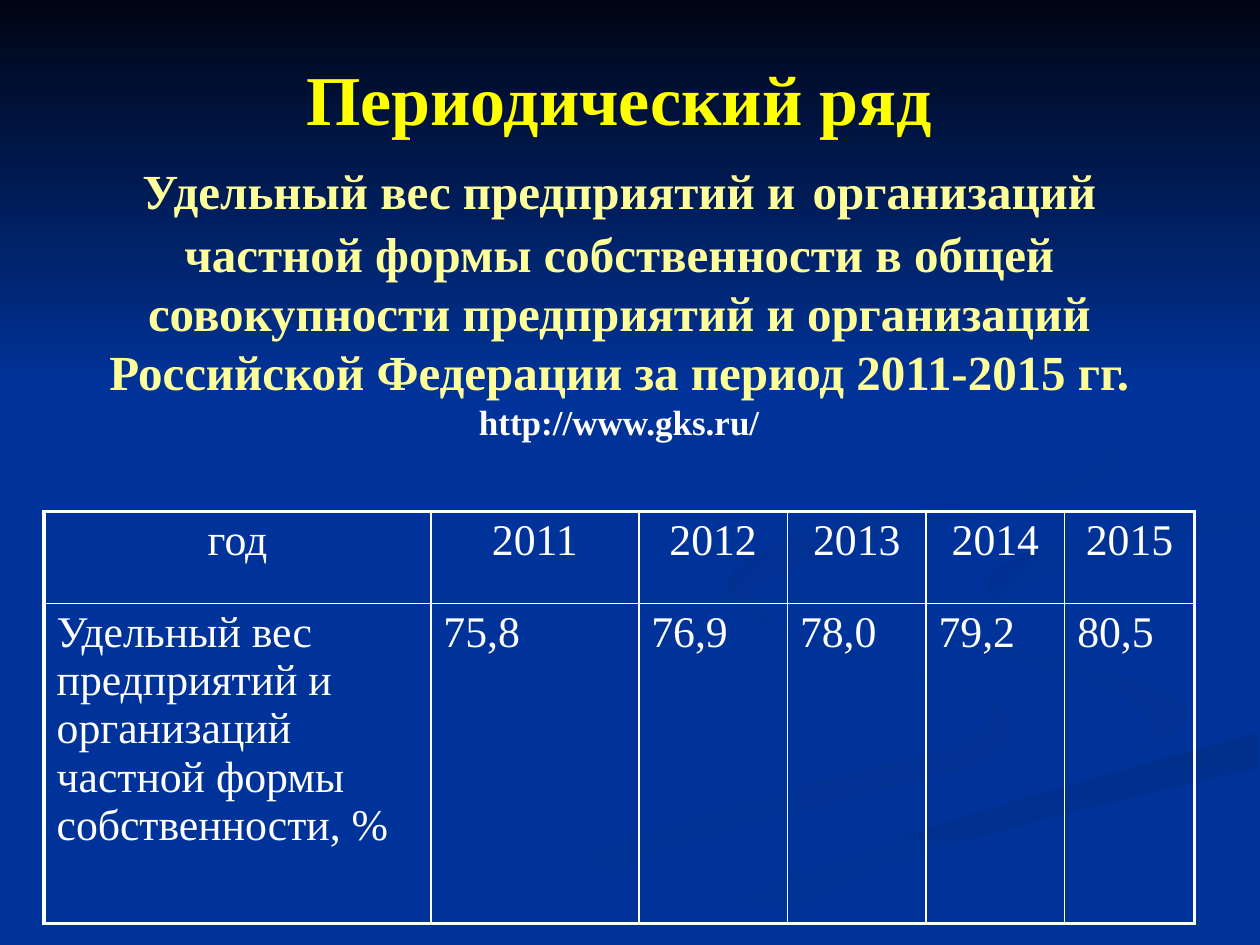
"""Build the slide on a periodic time series: title, table and ribbon background."""
from lxml import etree
from pptx import Presentation
from pptx.dml.color import RGBColor
from pptx.enum.shapes import MSO_SHAPE
from pptx.enum.text import MSO_ANCHOR, PP_ALIGN
from pptx.oxml.ns import qn
from pptx.util import Inches, Pt

RECT, MIDDLE = MSO_SHAPE.RECTANGLE, MSO_ANCHOR.MIDDLE
CENTER, LEFT = PP_ALIGN.CENTER, PP_ALIGN.LEFT
FONT, BLUE, WHITE, PALE = "Times New Roman", "003399", "FFFFFF", "FFFF99"
STEPS = 5


def rgb(value):
    return RGBColor.from_string(value)


def paint(sp, start, end, angle):
    sp.shadow.inherit = False
    sp.line.fill.background()
    sp.fill.gradient()
    sp.fill.gradient_angle = -angle
    for stop, color in zip(sp.fill.gradient_stops, (start, end)):
        stop.color.rgb = rgb(color)


prs = Presentation()
prs.slide_width, prs.slide_height = Inches(10), Inches(7.5)
U = prs.slide_width // 1000
s = prs.slides.add_slide(prs.slide_layouts[6])
s.background.fill.solid()
s.background.fill.fore_color.rgb = rgb(BLUE)

bend = [(724, 464), (733, 483), (792, 509), (905, 540), (943, 570), (894, 605)]
sweep = [(503, 749), (630, 693), (797, 638), (999, 581)]
fold = [(999, 402), (849, 427), (781, 462), (826, 496)]
ribbons = [
    (BLUE, "003193", 0, [
        [(575, 459), (581, 484), (654, 513), (770, 551), (785, 570), (749, 594),
         (579, 639), (417, 690), (300, 749)],
        [(361, 749), (499, 687), (676, 634), (780, 605), (800, 581), (781, 553),
         (682, 519), (594, 485), (575, 459)]]),
    (BLUE, "003193", 45, [bend, [(918, 581), (892, 553), (797, 524), (733, 488)]]),
    ("002F8C", BLUE, 90, [sweep, [(999, 609), (752, 672), (571, 749)]]),
    (BLUE, BLUE, 0, [
        [(999, 387), (808, 417)] + bend + [(704, 655), (477, 749)],
        sweep, [(999, 538), (848, 503)] + fold[2::-1]]),
    ("003091", BLUE, 45, [fold, [(805, 472), (878, 439), (999, 420)]]),
    ("002F8E", BLUE, 45, [
        [(762, 233), (846, 279), (889, 335), (842, 378), (649, 420), (577, 462), (622, 500)],
        [(593, 470), (683, 430), (855, 391), (894, 344), (843, 275), (762, 233)]]),
]
for start, end, angle, edges in ribbons:
    pts = []
    for edge in edges:
        knots = [edge[0]] + edge + [edge[-1]]
        for a, b, c, d in zip(knots, knots[1:], knots[2:], knots[3:]):
            for t in (n / STEPS for n in range(STEPS)):
                pts.append([int(U / 2 * (2 * q + (r - o) * t
                                         + (2 * o - 5 * q + 4 * r - v) * t ** 2
                                         + (3 * q - o - 3 * r + v) * t ** 3))
                            for o, q, r, v in zip(a, b, c, d)])
        pts.append([v * U for v in edge[-1]])
    fb = s.shapes.build_freeform(*pts[0])
    fb.add_line_segments(pts[1:], close=True)
    paint(fb.convert_to_shape(), start, end, angle)

band = s.shapes.add_shape(RECT, 0, 0, prs.slide_width, 308 * U)
paint(band, "000514", BLUE, 90)

sp = s.shapes.add_textbox(35 * U, 28 * U, 913 * U, 339 * U)
tf = sp.text_frame
tf.word_wrap, tf.vertical_anchor = True, MIDDLE
p = tf.paragraphs[0]
p.alignment = CENTER
title = [
    ("Периодический ряд", 40, "FFFF00"),
    ("Удельный вес предприятий и", 28, PALE),
    (" ", 40, PALE),
    ("организаций частной формы собственности в общей совокупности предприятий "
     "и организаций Российской Федерации за период 2011-2015 гг. ", 28, PALE),
    ("http://www.gks.ru/", 20, WHITE),
]
for i, (text, size, color) in enumerate(title):
    if i == 1:
        p.add_line_break()
    r = p.add_run()
    r.text = text
    r.font.name, r.font.size, r.font.bold = FONT, Pt(size), True
    r.font.color.rgb = rgb(color)

rows = [
    ["год", "2011", "2012", "2013", "2014", "2015"],
    ["Удельный вес предприятий и организаций частной формы собственности, %",
     "75,8", "76,9", "78,0", "79,2", "80,5"],
]
widths, heights = [307, 165, 118, 110, 110, 103], [73, 254]
tbl = s.shapes.add_table(2, 6, 35 * U, 406 * U, sum(widths) * U, sum(heights) * U).table
tbl.first_row = tbl.horz_banding = False
for col, width in zip(tbl.columns, widths):
    col.width = width * U
for i, height in enumerate(heights):
    tbl.rows[i].height = height * U
    for j, text in enumerate(rows[i]):
        cell = tbl.cell(i, j)
        cell.fill.background()
        cell.margin_top = cell.margin_bottom = 4 * U
        cell.margin_left = cell.margin_right = 10 * U
        p = cell.text_frame.paragraphs[0]
        p.text = text
        p.alignment = CENTER if i == 0 else LEFT
        r = p.runs[0]
        r.font.name, r.font.size = FONT, Pt(25)
        r.font.color.rgb = rgb(WHITE)
        outer = {"a:lnL": j == 0, "a:lnR": j == 5, "a:lnT": i == 0, "a:lnB": i == 1}
        for k, (tag, thick) in enumerate(outer.items()):
            ln = etree.Element(qn(tag), w=str(Pt(2.25 if thick else 1)))
            fill = etree.SubElement(ln, qn("a:solidFill"))
            etree.SubElement(fill, qn("a:srgbClr"), val=WHITE)
            cell._tc.tcPr.insert(k, ln)

prs.save("out.pptx")
